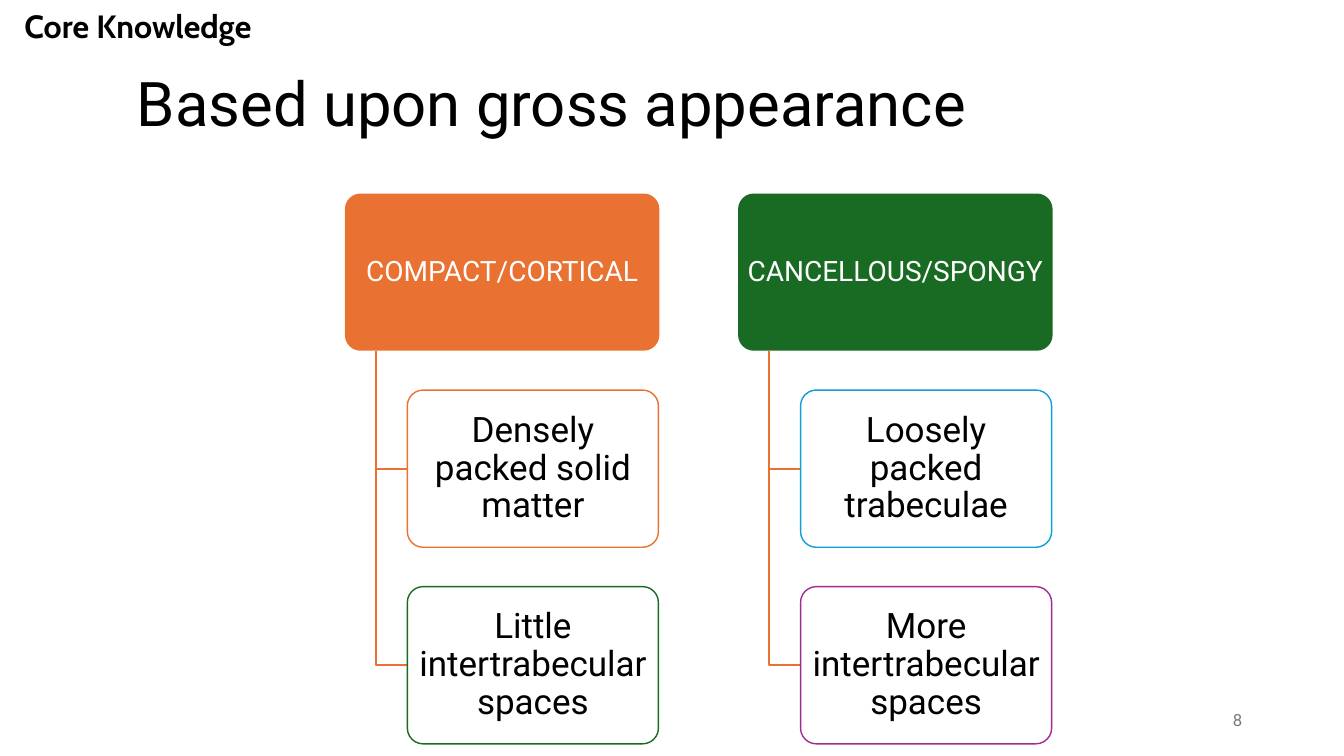
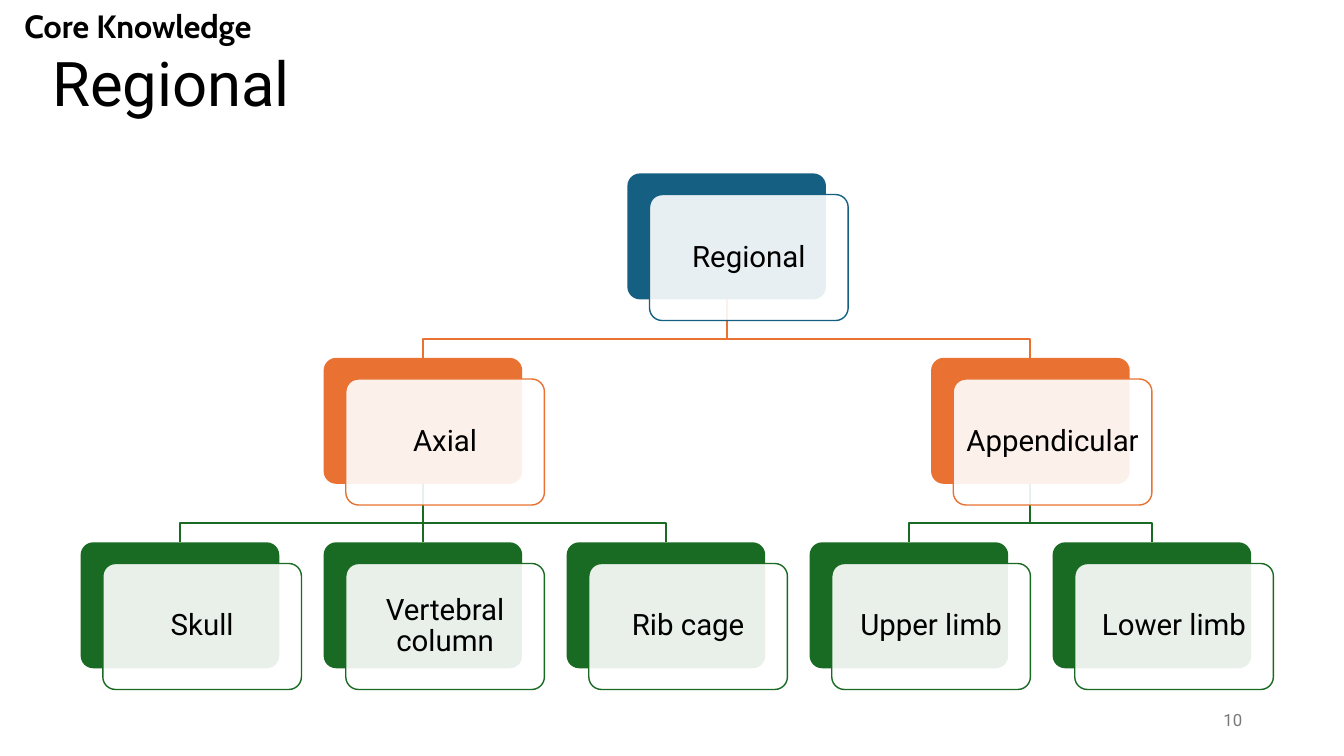
"""Build two slides on the classification of bones."""
from pptx import Presentation
from pptx.dml.color import RGBColor
from pptx.enum.shapes import MSO_CONNECTOR as LINK, MSO_SHAPE as SHAPE
from pptx.enum.text import MSO_ANCHOR as ANCHOR, PP_ALIGN as ALIGN
from pptx.oxml import parse_xml
from pptx.oxml.ns import nsdecls, qn
from pptx.util import Inches, Pt

HUES = {
    "black": "000000", "white": "FFFFFF", "grey": "797979",
    "orange": "E97132", "green": "196B24", "blue": "156082",
    "sky": "0F9ED5", "purple": "A02B93",
}
TINT = {name: RGBColor.from_string(code) for name, code in HUES.items()}


def box(slide, at, text="", size=20, ink="black", fill=None, edge=None,
        align=ALIGN.CENTER, pad=0.1, font="Roboto", bold=False):
    place = [Inches(n) for n in at]
    if fill:
        shape = slide.shapes.add_shape(SHAPE.ROUNDED_RECTANGLE, *place)
        shape.adjustments[0] = 0.1
        shape.shadow.inherit = False
        shape.fill.solid()
        shape.fill.fore_color.rgb = TINT[fill]
        if edge:
            shape.line.color.rgb = TINT[edge]
            shape.line.width = Pt(1)
            solid = shape.fill._xPr.find(qn("a:solidFill"))
            solid[0].append(parse_xml(f'<a:alpha {nsdecls("a")} val="90000"/>'))
        else:
            shape.line.fill.background()
    else:
        shape = slide.shapes.add_textbox(*place)
    if text:
        frame = shape.text_frame
        frame.text = text
        frame.word_wrap = True
        frame.vertical_anchor = ANCHOR.MIDDLE
        frame.margin_left = frame.margin_right = Inches(pad)
        para = frame.paragraphs[0]
        para.alignment = align
        para.line_spacing = 0.9
        style = para.runs[0].font
        style.name, style.size, style.bold = font, Pt(size), bold
        style.color.rgb = TINT[ink]
    return shape


def wire(slide, points, hue):
    spots = [(Inches(x), Inches(y)) for x, y in points]
    if len(spots) == 2:
        line = slide.shapes.add_connector(LINK.STRAIGHT, *spots[0], *spots[1])
        line._element.spPr.append(parse_xml(f'<a:effectLst {nsdecls("a")}/>'))
    else:
        path = slide.shapes.build_freeform(*spots[0], scale=1.0)
        path.add_line_segments(spots[1:], close=False)
        line = path.convert_to_shape()
        line.fill.background()
        line.shadow.inherit = False
    line.line.color.rgb = TINT[hue]
    line.line.width = Pt(1.5)
    return line


deck = Presentation()
deck.slide_width, deck.slide_height = Inches(13.33), Inches(7.5)

HEADS = [
    ("Based upon gross appearance", (1.26, 0.2, 9.65, 1.71), "8"),
    ("Regional", (0.42, 0.23, 9, 1.25), "10"),
]
slides = []
for title, at, number in HEADS:
    slide = deck.slides.add_slide(deck.slide_layouts[6])
    box(slide, at, title, 44, align=ALIGN.LEFT)
    box(slide, (9.42, 6.95, 3, 0.4), number, 12, "grey", align=ALIGN.RIGHT)
    box(slide, (0.02, 0.03, 2.7, 0.5), "Core Knowledge", 23, pad=0.05,
        font="Cabin", bold=True)
    slides.append(slide)
gross, region = slides

TYPES = [
    ("COMPACT/CORTICAL", "orange", [
        ("Densely packed solid matter", "orange"),
        ("Little intertrabecular spaces", "green")]),
    ("CANCELLOUS/SPONGY", "green", [
        ("Loosely packed trabeculae", "sky"),
        ("More intertrabecular spaces", "purple")]),
]
top, tall, pitch, step = 1.92, 1.56, 1.95, 0.31
for col, (name, hue, traits) in enumerate(TYPES):
    left = 3.42 + 3.9 * col
    stem, inner = left + step, left + 2 * step
    box(gross, (left, top, 3.12, tall), name, 20, "white", hue, pad=0.04)
    for row, (trait, edge) in enumerate(traits, 1):
        y = top + pitch * row
        mid = y + tall / 2
        wire(gross, [(stem, top + tall), (stem, mid), (inner, mid)], "orange")
        box(gross, (inner, y, 2.49, tall), trait, 25, fill="white",
            edge=edge, pad=0.05)

TREE = [
    ("Regional", 2.25, 0, None),
    ("Axial", 1, 1, "Regional"),
    ("Appendicular", 3.5, 1, "Regional"),
    ("Skull", 0, 2, "Axial"),
    ("Vertebral column", 1, 2, "Axial"),
    ("Rib cage", 2, 2, "Axial"),
    ("Upper limb", 3, 2, "Appendicular"),
    ("Lower limb", 4, 2, "Appendicular"),
]
LEVELS = ["blue", "orange", "green"]
wide, high = 1.97, 1.25
spots = {name: (0.8 + 2.41 * col, 1.72 + 1.83 * row)
         for name, col, row, _ in TREE}

joins = []
for name, _, row, above in TREE:
    if above:
        (px, py), (cx, cy) = spots[above], spots[name]
        start, end = (px + wide / 2, py + high), (cx + wide / 2, cy)
        bend = py + high + 0.39
        turns = [] if px == cx else [(start[0], bend), (end[0], bend)]
        line = wire(region, [start, *turns, end], LEVELS[row])
        if not turns:
            joins.append((line, above, name))

backs = {}
for name, _, row, _ in TREE:
    x, y = spots[name]
    hue = LEVELS[row]
    backs[name] = box(region, (x, y, wide, high), fill=hue)
    box(region, (x + 0.22, y + 0.21, wide, high), name, 21, fill="white",
        edge=hue, pad=0.08)

for line, above, name in joins:
    line.begin_connect(backs[above], 2)
    line.end_connect(backs[name], 0)

deck.save("out.pptx")
